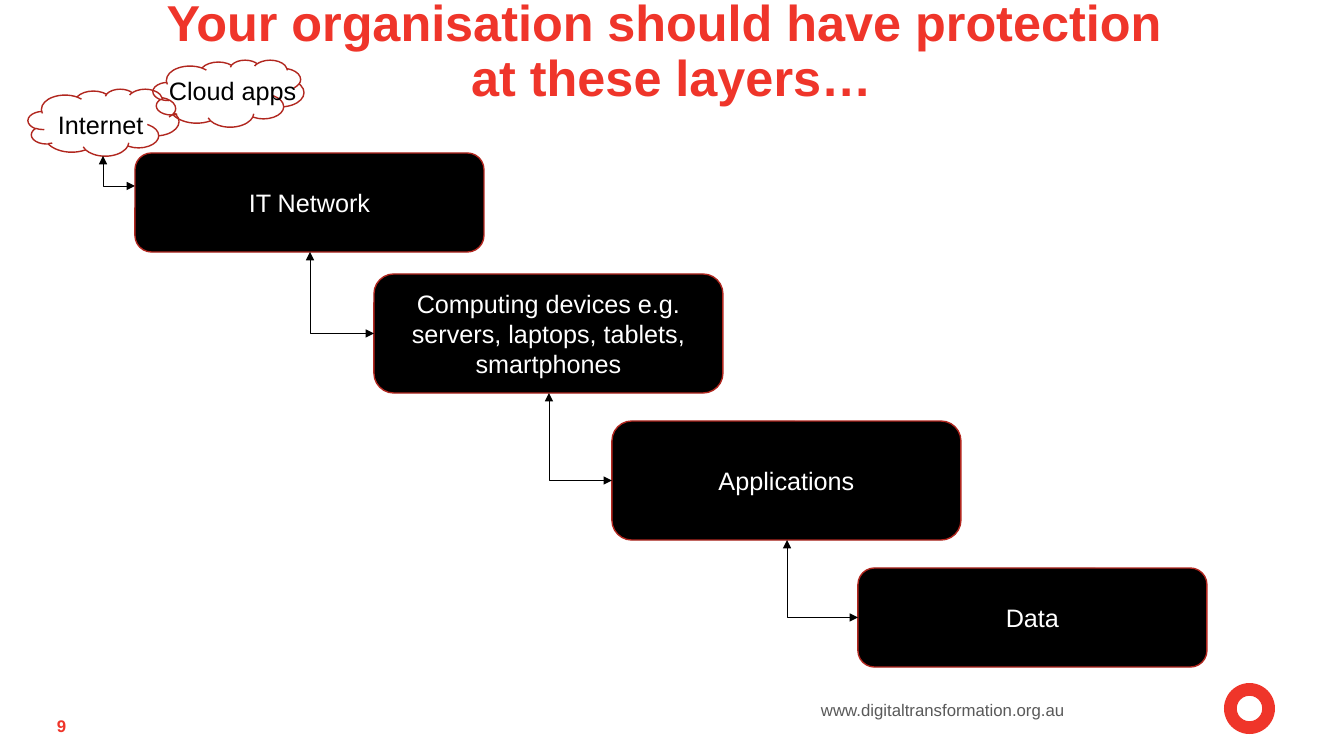
from pptx import Presentation
from pptx.dml.color import RGBColor
from pptx.enum.shapes import MSO_CONNECTOR as CONN, MSO_SHAPE as SHAPE
from pptx.enum.text import MSO_ANCHOR as ANCHOR, PP_ALIGN as ALIGN
from pptx.oxml.ns import qn
from pptx.util import Pt
from lxml import etree

PX = 914400 / 100.8
RED, DARK_RED, BLACK, WHITE, GREY = "EF352A", "B1271F", "000000", "FFFFFF", "595959"


def emu(*lengths):
    return [round(v * PX) for v in lengths]


def color(hex_code):
    return RGBColor.from_string(hex_code)


def write(sp, text, size=18, fill=BLACK, bold=False, align=ALIGN.LEFT,
          anchor=ANCHOR.TOP, spacing=None, inset=None):
    tf = sp.text_frame
    tf.word_wrap = True
    tf.vertical_anchor = anchor
    if inset is not None:
        tf.margin_left = tf.margin_top = tf.margin_right = tf.margin_bottom = inset
    p = tf.paragraphs[0]
    p.text = text
    p.alignment = align
    if spacing:
        p.line_spacing = spacing
    for r in p.runs:
        r.font.name, r.font.size, r.font.bold = "Arial", Pt(size), bold
        r.font.color.rgb = color(fill)


def add_text(s, box, text, **fmt):
    write(s.shapes.add_textbox(*emu(*box)), text, **fmt)


def add_shape(s, kind, box, fill=None, line=None):
    sp = s.shapes.add_shape(kind, *emu(*box))
    sp.shadow.inherit = False
    if fill:
        sp.fill.solid()
        sp.fill.fore_color.rgb = color(fill)
    else:
        sp.fill.background()
    if line:
        sp.line.color.rgb = color(line)
        sp.line.width = Pt(1)
    else:
        sp.line.fill.background()
    return sp


def add_cloud(s, left, top, text, text_box):
    add_shape(s, SHAPE.CLOUD, (left, top, 151, 67), line=DARK_RED)
    add_text(s, text_box, text)


def add_layer(s, left, top, height, text):
    sp = add_shape(s, SHAPE.ROUNDED_RECTANGLE, (left, top, 349, height), BLACK, DARK_RED)
    write(sp, text, fill=WHITE, align=ALIGN.CENTER, anchor=ANCHOR.MIDDLE)


def add_elbow(s, x1, y1, x2, y2):
    """Double-headed arrow going down from (x1, y1), then right to (x2, y2)."""
    cx, cy = (x1 + x2) / 2, (y1 + y2) / 2
    half_drop, half_run = (y2 - y1) / 2, (x2 - x1) / 2
    # The one-bend preset is laid out mirrored, then turned by 270 degrees
    cn = s.shapes.add_connector(CONN.ELBOW, *emu(cx + half_drop, cy - half_run,
                                                 cx - half_drop, cy + half_run))
    cn.line.color.rgb = color(BLACK)
    cn.line.width = Pt(0.5)
    sp_pr = cn._element.spPr
    sp_pr.find(qn("a:xfrm")).set("rot", str(270 * 60000))
    sp_pr.find(qn("a:prstGeom")).set("prst", "bentConnector2")
    for end in ("a:headEnd", "a:tailEnd"):
        etree.SubElement(sp_pr.find(qn("a:ln")), qn(end), type="triangle")
    etree.SubElement(sp_pr, qn("a:effectLst"))


def main():
    prs = Presentation()
    prs.slide_width, prs.slide_height = emu(1344, 756)
    s = prs.slides.add_slide(prs.slide_layouts[6])

    # Footer
    add_shape(s, SHAPE.DONUT, (1224, 683, 51, 51), fill=RED)
    add_text(s, (57, 709, 43, 34), "9", size=12, fill=RED, bold=True,
             anchor=ANCHOR.MIDDLE, inset=0)
    add_text(s, (821, 695, 260, 30), "www.digitaltransformation.org.au", size=12,
             fill=GREY, anchor=ANCHOR.MIDDLE, inset=0)

    # Title
    add_text(s, (62, 7, 1219, 91),
             "Your organisation should have protection \vat these layers…",
             size=36, fill=RED, bold=True, align=ALIGN.CENTER,
             anchor=ANCHOR.MIDDLE, spacing=0.9, inset=0)

    # Outside world
    add_cloud(s, 28, 89, "Internet", (48, 104, 111, 40))
    add_cloud(s, 153, 60, "Cloud apps", (159, 70, 151, 40))
    add_elbow(s, 103, 156, 135, 186)

    # Protection layers: left, top, height, label
    layers = [
        (135, 153, 99, "IT Network"),
        (374, 274, 119, "Computing devices e.g. servers, laptops, tablets, smartphones"),
        (612, 421, 119, "Applications"),
        (858, 568, 99, "Data"),
    ]
    for layer in layers:
        add_layer(s, *layer)

    # Each layer's bottom centre leads to the next layer's left side
    for (left, top, height, _), (nxt_left, nxt_top, nxt_height, _) in zip(layers, layers[1:]):
        add_elbow(s, left + 175, top + height, nxt_left, nxt_top + nxt_height / 2)

    prs.save("out.pptx")


if __name__ == "__main__":
    main()
